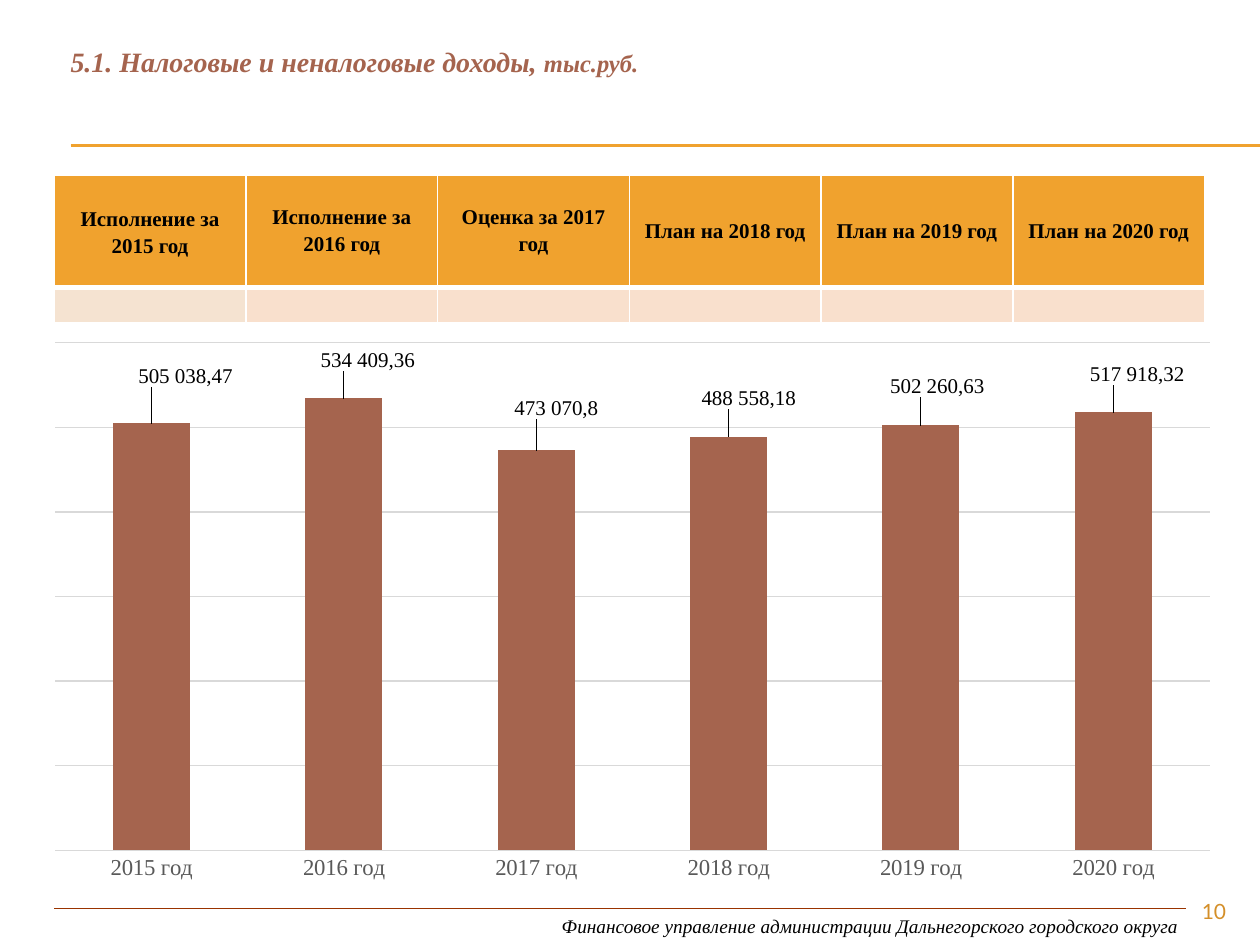
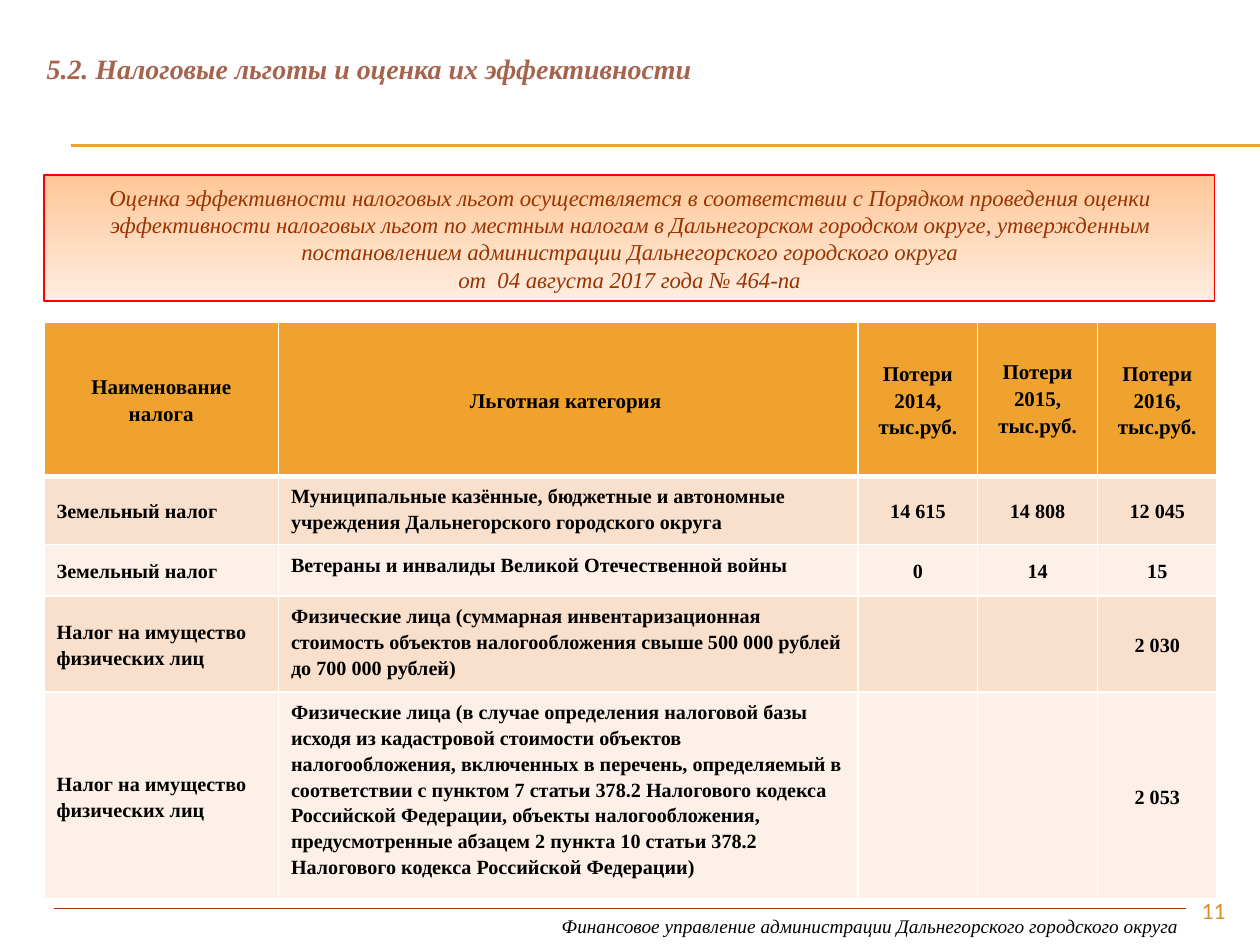
from lxml import etree
from pptx import Presentation
from pptx.chart.data import CategoryChartData
from pptx.dml.color import RGBColor
from pptx.enum.chart import XL_CHART_TYPE, XL_LABEL_POSITION, XL_TICK_MARK
from pptx.enum.shapes import MSO_CONNECTOR, MSO_SHAPE
from pptx.enum.text import MSO_ANCHOR, PP_ALIGN
from pptx.oxml.ns import qn
from pptx.util import Inches, Pt

LEFT, CENTER, RIGHT = PP_ALIGN.LEFT, PP_ALIGN.CENTER, PP_ALIGN.RIGHT
TOP, MIDDLE = MSO_ANCHOR.TOP, MSO_ANCHOR.MIDDLE
COLUMNS = XL_CHART_TYPE.COLUMN_CLUSTERED
OUTSIDE_END = XL_LABEL_POSITION.OUTSIDE_END
NO_TICKS = XL_TICK_MARK.NONE
STRAIGHT = MSO_CONNECTOR.STRAIGHT
RECTANGLE = MSO_SHAPE.RECTANGLE

SERIF, SANS = "Times New Roman", "Lato"
C15 = "http://schemas.microsoft.com/office/drawing/2012/chart"
LABEL_EXTENSION = "{CE6537A1-D6FC-4f65-9D91-7224C49458BB}"
COLORS = {
    "accent": "F0A22E", "brown": "A5644E", "rust": "993300", "black": "000000",
    "white": "FFFFFF", "number": "D48F29", "grid": "D9D9D9", "axis": "595959",
    "sand": "F5E3D1", "peach": "F9E0CD", "cream": "FCF0E8", "red": "FF0000",
    "notice_top": "FFC798", "notice_bottom": "FFEDE0",
}
FOOTER = "Финансовое управление администрации Дальнегорского городского округа"

HEADINGS = ["Исполнение за 2015 год", "Исполнение за 2016 год", "Оценка за 2017 год",
            "План на 2018 год", "План на 2019 год", "План на 2020 год"]
# Year, income, label text, label shift in inches
INCOME = [
    ("2015 год", 505038, "505 038,47", 0.27, -0.24),
    ("2016 год", 534409, "534 409,36", 0.19, -0.17),
    ("2017 год", 473071, "473 070,8", 0.16, -0.2),
    ("2018 год", 488558, "488 558,18", 0.16, -0.18),
    ("2019 год", 502261, "502 260,63", 0.13, -0.18),
    ("2020 год", 517918, "517 918,32", 0.19, -0.17),
]
NOTICE = [
    "Оценка эффективности налоговых льгот осуществляется в соответствии с Порядком "
    "проведения оценки эффективности налоговых льгот по местным налогам в Дальнегорском "
    "городском округе, утвержденным постановлением администрации Дальнегорского "
    "городского округа",
    "от  04 августа 2017 года № 464-па",
]
BENEFITS = [
    ["Наименование налога", "Льготная категория ", "Потери 2014, тыс.руб.",
     "Потери 2015, тыс.руб.", "Потери 2016, тыс.руб."],
    ["Земельный налог",
     "Муниципальные казённые, бюджетные и автономные учреждения Дальнегорского "
     "городского округа", "14 615", "14 808", "12 045"],
    ["Земельный налог", "Ветераны и инвалиды Великой Отечественной войны",
     "0", "14", "15"],
    ["Налог на имущество физических лиц",
     "Физические лица (суммарная инвентаризационная стоимость объектов "
     "налогообложения свыше 500 000 рублей до 700 000 рублей)", "", "", "2 030"],
    ["Налог на имущество физических лиц",
     "Физические лица (в случае определения налоговой базы исходя из кадастровой "
     "стоимости объектов налогообложения, включенных в перечень, определяемый в "
     "соответствии с пунктом 7 статьи 378.2 Налогового кодекса Российской Федерации, "
     "объекты налогообложения, предусмотренные абзацем 2 пункта 10 статьи 378.2 "
     "Налогового кодекса Российской Федерации)", "", "", "2 053"],
]


def rgb(name):
    return RGBColor.from_string(COLORS[name])


def style_font(font, size, color="black", face=SERIF, bold=False, italic=False):
    font.name, font.size, font.bold, font.italic = face, Pt(size), bold, italic
    font.color.rgb = rgb(color)


def write(frame, paragraphs, align=LEFT, spacing=None, size=12, **font):
    """Each paragraph is a string or a list of (text, size) runs."""
    for index, content in enumerate(paragraphs):
        paragraph = frame.add_paragraph() if index else frame.paragraphs[0]
        paragraph.alignment = align
        if spacing:
            paragraph.line_spacing = spacing
        runs = [(content, size)] if isinstance(content, str) else content
        for text, run_size in runs:
            run = paragraph.add_run()
            run.text = text
            style_font(run.font, run_size, **font)


def add_rule(slide, left, right, y, color, width):
    rule = slide.shapes.add_connector(STRAIGHT, Inches(left), Inches(y),
                                      Inches(right), Inches(y))
    rule.line.color.rgb = rgb(color)
    rule.line.width = Pt(width)
    etree.SubElement(rule._element.spPr, qn("a:effectLst"))


def add_text(slide, box, text, **fmt):
    frame = slide.shapes.add_textbox(*map(Inches, box)).text_frame
    frame.word_wrap = True
    write(frame, [text], **fmt)


def start_slide(prs, number, title_runs, left, top):
    """Slide with its title, header rules, footer and number."""
    slide = prs.slides.add_slide(prs.slide_layouts[5])
    title = slide.shapes.title
    title.left, title.top = Inches(left), Inches(top)
    title.width, title.height = Inches(9.25), Inches(0.38)
    frame = title.text_frame
    frame.word_wrap = True
    frame.vertical_anchor = MIDDLE
    frame.margin_left = frame.margin_right = 0
    write(frame, [title_runs], color="brown", bold=True, italic=True)
    for y in (1.15, 1.16):
        add_rule(slide, 0.56, 10, y, "accent", 0.75)
    add_rule(slide, 0.43, 9.41, 7.21, "rust", 1)
    add_text(slide, (4.06, 7.21, 5.39, 0.29), FOOTER, size=11, italic=True, align=RIGHT)
    add_text(slide, (9, 7.08, 0.83, 0.27), str(number), face=SANS, color="number",
             align=RIGHT)
    return slide


def set_borders(cell, bottom_width):
    properties = cell._tc.get_or_add_tcPr()
    for index, side in enumerate(("lnL", "lnR", "lnT", "lnB")):
        width = bottom_width if side == "lnB" else 1
        line = etree.Element(qn(f"a:{side}"), w=str(Pt(width)))
        fill = etree.SubElement(line, qn("a:solidFill"))
        etree.SubElement(fill, qn("a:srgbClr"), val=COLORS["white"])
        properties.insert(index, line)


def add_grid(slide, left, top, widths, heights):
    table = slide.shapes.add_table(len(heights), len(widths), Inches(left), Inches(top),
                                   Inches(sum(widths)), Inches(sum(heights))).table
    for column, width in zip(table.columns, widths):
        column.width = Inches(width)
    for row, height in zip(table.rows, heights):
        row.height = Inches(height)
    return table


def fill_cell(cell, text, fill, header=False, anchor=MIDDLE, align=CENTER, size=12):
    cell.fill.solid()
    cell.fill.fore_color.rgb = rgb(fill)
    if text:
        cell.vertical_anchor = anchor
        write(cell.text_frame, [text], align=align, size=size, spacing=1.15, bold=True)
    else:
        etree.SubElement(cell.text_frame.paragraphs[0]._p, qn("a:endParaRPr"), sz="1000")
    set_borders(cell, 3 if header else 1)


def add_period_table(slide, left, top, width):
    count = len(HEADINGS)
    table = add_grid(slide, left, top, [width / count] * count, [0.89, 0.28])
    for column, heading in enumerate(HEADINGS):
        header, blank = table.cell(0, column), table.cell(1, column)
        for cell in (header, blank):
            cell.margin_left = cell.margin_right = Inches(0.07)
            cell.margin_top = cell.margin_bottom = 0
        header.margin_bottom = Inches(0.03 if column else 0)
        fill_cell(header, heading, "accent", header=True)
        fill_cell(blank, "", "peach" if column else "sand")


def add_layout(parent, position, **values):
    """Manual chart layout; values go in schema order."""
    layout = etree.Element(qn("c:layout"))
    manual = etree.SubElement(layout, qn("c:manualLayout"))
    for tag, value in values.items():
        etree.SubElement(manual, qn(f"c:{tag}"), val=str(value))
    for old in parent.findall(qn("c:layout")):
        parent.remove(old)
    parent.insert(position, layout)


def hide_leader_lines(labels):
    for old in labels.findall(qn("c:showLeaderLines")):
        labels.remove(old)
    extensions = etree.SubElement(labels, qn("c:extLst"))
    extension = etree.SubElement(extensions, qn("c:ext"), uri=LABEL_EXTENSION)
    etree.SubElement(extension, f"{{{C15}}}showLeaderLines", nsmap={"c15": C15}, val="0")


def add_income_chart(slide, box):
    width, height = box[2:]
    data = CategoryChartData()
    data.categories = [entry[0] for entry in INCOME]
    data.add_series("Series 1", [entry[1] for entry in INCOME])
    chart = slide.shapes.add_chart(COLUMNS, *map(Inches, box), data).chart
    chart.has_legend = chart.has_title = False
    style_font(chart.font, 10)
    add_layout(chart._chartSpace.chart.plotArea, 0, layoutTarget="inner", xMode="edge",
               yMode="edge", x=0.19 / width, y=0.09 / height,
               w=9.16 / width, h=4.03 / height)

    # Axes
    years, amounts = chart.category_axis, chart.value_axis
    style_font(years.tick_labels.font, 13, "axis")
    years.major_tick_mark = NO_TICKS
    years.format.line.fill.background()
    amounts.visible = False
    amounts.minimum_scale, amounts.maximum_scale = 0, 600000
    amounts.major_unit = 100000
    amounts.major_gridlines.format.line.color.rgb = rgb("grid")
    amounts.major_gridlines.format.line.width = Pt(0.75)

    # Columns and their shifted labels
    plot = chart.plots[0]
    plot.vary_by_categories = False
    plot.gap_width = 150
    income = plot.series[0]
    income.format.fill.solid()
    income.format.fill.fore_color.rgb = rgb("brown")
    labels = income.data_labels
    labels.show_value = True
    for index, (_, _, text, dx, dy) in enumerate(INCOME):
        label = income.points[index].data_label
        write(label.text_frame, [text], align=CENTER)
        label.position = OUTSIDE_END
        add_layout(labels._element.findall(qn("c:dLbl"))[index], 1,
                   x=dx / width, y=dy / height)
    hide_leader_lines(labels._element)


def add_notice(slide, box):
    notice = slide.shapes.add_shape(RECTANGLE, *map(Inches, box))
    notice.shadow.inherit = False
    notice.fill.gradient()
    notice.fill.gradient_angle = 270
    for stop, color in zip(notice.fill.gradient_stops, ("notice_top", "notice_bottom")):
        stop.color.rgb = rgb(color)
    notice.line.color.rgb = rgb("red")
    notice.line.width = Pt(1)
    notice.text_frame.vertical_anchor = MIDDLE
    write(notice.text_frame, NOTICE, size=13, color="rust", italic=True, align=CENTER)


def add_benefit_table(slide, left, top):
    table = add_grid(slide, left, top, [1.86, 4.6] + [0.95] * 3,
                     [1.22, 0.54, 0.41, 0.76, 1.64])
    for row, texts in enumerate(BENEFITS):
        for column, text in enumerate(texts):
            cell = table.cell(row, column)
            if row == 0:
                fill_cell(cell, text, "accent", header=True)
            else:
                fill_cell(cell, text, "peach" if row % 2 else "cream", size=11.5,
                          align=LEFT if column < 2 else CENTER,
                          anchor=TOP if column == 1 else MIDDLE)
    # The 2015 heading sits slightly higher
    table.cell(0, 3).margin_bottom = Inches(0.08)


def build_income_slide(prs):
    title = [("5.1. Налоговые и неналоговые доходы, ", 16), ("тыс.руб.", 14)]
    slide = start_slide(prs, 10, title, 0.56, 0.3)
    add_period_table(slide, 0.43, 1.39, 9.13)
    add_income_chart(slide, (0.25, 2.63, 9.55, 4.44))


def build_benefits_slide(prs):
    title = [("5.2. Налоговые льготы и оценка их эффективности", 16)]
    slide = start_slide(prs, 11, title, 0.37, 0.35)
    add_benefit_table(slide, 0.35, 2.56)
    add_notice(slide, (0.35, 1.39, 9.29, 1))


def main():
    prs = Presentation()
    prs.slide_width, prs.slide_height = Inches(10), Inches(7.5)
    build_income_slide(prs)
    build_benefits_slide(prs)
    prs.save("out.pptx")


if __name__ == "__main__":
    main()
